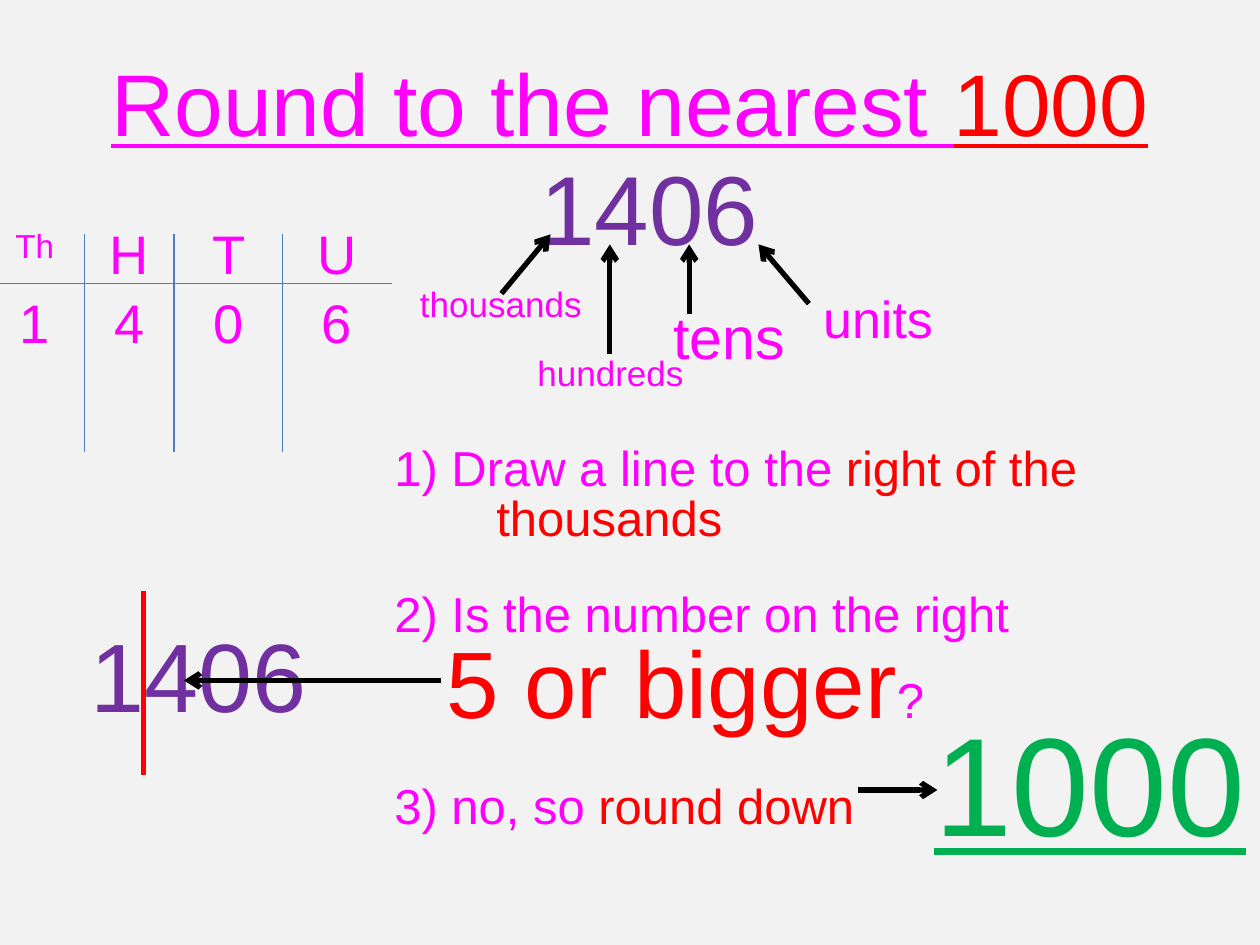
from lxml.etree import SubElement
from pptx import Presentation
from pptx.dml.color import RGBColor
from pptx.enum.shapes import MSO_CONNECTOR as Link
from pptx.enum.text import MSO_ANCHOR as Anchor, PP_ALIGN as Align
from pptx.oxml.ns import qn
from pptx.util import Inches, Pt

PINK, RED, PURPLE, GREEN = "FF00FF", "FF0000", "7030A0", "00B050"
BLACK, BLUE = "000000", "4B7EBC"
tint = RGBColor.from_string


def write(para, parts, line=False):
    """Fill a paragraph with (text, size, colour) runs."""
    for text, size, hue in parts:
        run = para.add_run()
        run.text = text
        run.font.name = "Arial"
        run.font.size = Pt(size)
        run.font.color.rgb = tint(hue)
        run.font.underline = line


def draw(x1, y1, x2, y2, hue, width, arrow=False):
    """Draw a straight line, with an open arrowhead at its end if asked."""
    link = slide.shapes.add_connector(
        Link.STRAIGHT, Inches(x1), Inches(y1), Inches(x2), Inches(y2))
    link.line.color.rgb = tint(hue)
    link.line.width = Pt(width)
    if arrow:
        SubElement(link.line._get_or_add_ln(), qn("a:tailEnd"), type="arrow")
    SubElement(link._element.spPr, qn("a:effectLst"))


deck = Presentation()
deck.slide_width, deck.slide_height = Inches(10), Inches(7.5)
slide = deck.slides.add_slide(deck.slide_layouts[1])
slide.background.fill.solid()
slide.background.fill.fore_color.rgb = tint("F2F2F2")

# Title
title, body = slide.placeholders
title.left, title.top = Inches(0.75), Inches(0)
title.width, title.height = Inches(8.5), Inches(1.61)
title.text_frame.vertical_anchor = Anchor.MIDDLE
head = title.text_frame.paragraphs[0]
head.alignment = Align.CENTER
write(head, [("Round to the nearest ", 50, PINK), ("1000", 50, RED)], True)

# Steps: first-line indent, space before, runs
steps = [
    (-0.81, 0, [("1) Draw a line to the ", 28, PINK),
                ("right of the thousands", 28, RED)]),
    (-0.81, 27, [("2) Is the number on the right", 28, PINK)]),
    (-0.4, 0, [("5 or bigger", 53.9, RED), ("?", 28, PINK)]),
    (-0.81, 27, [("3) no, so ", 28, PINK), ("round down", 28, RED)]),
]
body.left, body.top = Inches(3.03), Inches(3.5)
body.width, body.height = Inches(6.54), Inches(3.24)
frame = body.text_frame
frame.vertical_anchor = Anchor.TOP
for i, (indent, gap, parts) in enumerate(steps):
    para = frame.add_paragraph() if i else frame.paragraphs[0]
    para.line_spacing = 0.84
    para.space_before = Pt(gap)
    props = para._p.get_or_add_pPr()
    props.set("marL", str(Inches(0.81)))
    props.set("indent", str(Inches(indent)))
    SubElement(props, qn("a:buNone"))
    write(para, parts)

# Place value grid: text, left, top, width, height, size, colour, spacing
texts = []
for left, name, digit in zip((0, 0.75, 1.54, 2.4), ("Th", "H", "T", "U"), "1406"):
    top, size = (1.7, 19) if name == "Th" else (1.78, 31)
    texts.append((name, left, top, 0.55, 0.55, size, PINK, 0.8))
    texts.append((digit, left, 2.33, 0.55, 0.55, 31, PINK, 0.8))
draw(0, 2.25, 3.11, 2.25, BLUE, 0.75)
for x in (0.67, 1.38, 2.24):
    draw(x, 1.86, x, 3.59, BLUE, 0.75)

# Numbers and digit names
texts += [
    ("1406", 4.13, 0.92, 2.05, 1.61, 56, PURPLE, 0.8),
    ("thousands", 2.95, 1.94, 2.05, 0.94, 20, PINK, 1),
    ("hundreds", 3.82, 2.49, 2.05, 0.94, 20, PINK, 1),
    ("tens", 5.24, 2.25, 1.1, 0.94, 33.8, PINK, 0.8),
    ("units", 6.42, 2.1, 1.1, 0.94, 29.7, PINK, 0.8),
    ("1406", 0.59, 4.54, 1.97, 1.61, 55.5, PURPLE, 1),
    ("1000", 7.3, 5.48, 2.7, 1.45, 80, GREEN, 1),
]
for text, left, top, width, height, size, hue, space in texts:
    box = slide.shapes.add_textbox(
        Inches(left), Inches(top), Inches(width), Inches(height))
    frame = box.text_frame
    answer = hue == GREEN
    frame.word_wrap = not answer
    frame.vertical_anchor = Anchor.TOP if answer else Anchor.MIDDLE
    para = frame.paragraphs[0]
    para.alignment = Align.CENTER
    para.line_spacing = float(space)
    write(para, [(text, size, hue)], answer)

# Dividing line and arrows
draw(1.14, 4.69, 1.14, 6.15, RED, 3)
for ends in [
    (3.98, 2.33, 4.37, 1.86),
    (4.84, 2.81, 4.84, 1.94),
    (5.47, 2.49, 5.47, 1.94),
    (6.42, 2.41, 6.02, 1.94),
    (3.5, 5.4, 1.46, 5.4),
    (6.81, 6.27, 7.44, 6.27),
]:
    draw(*ends, BLACK, 3, True)

deck.save("out.pptx")
